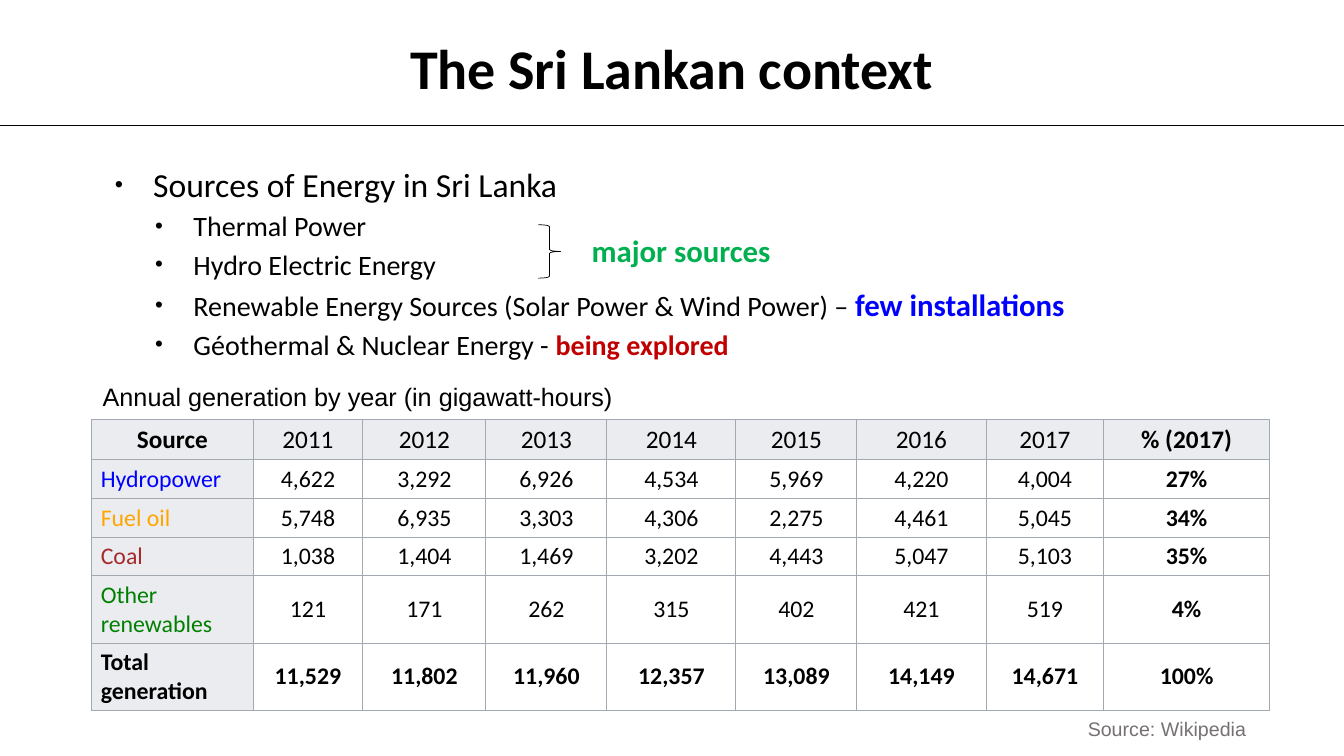
from lxml.etree import SubElement
from pptx import Presentation
from pptx.dml.color import RGBColor
from pptx.enum.shapes import MSO_CONNECTOR, MSO_SHAPE
from pptx.enum.text import MSO_ANCHOR, PP_ALIGN
from pptx.oxml.ns import qn
from pptx.util import Inches, Pt

BLACK, BLUE, GREEN, RED, GREY = "000000", "0000FF", "00B050", "C00000", "767171"
HEADER_FILL, BORDER = "EAECF0", "A2A9B1"

LABELS = [
    ("The Sri Lankan context", (3.25, 0.31, 6.82, 0.71), "Calibri", 40, BLACK, True, PP_ALIGN.CENTER),
    ("Annual generation by year (in gigawatt-hours)", (0.92, 3.73, 5.61, 0.4),
     "Arial", 18, BLACK, False, PP_ALIGN.LEFT),
    ("Source: Wikipedia", (10.69, 7.06, 1.88, 0.34), "Arial", 14, GREY, False, PP_ALIGN.LEFT),
    ("major sources", (5.77, 2.25, 2.4, 0.47), "Calibri", 22, GREEN, True, PP_ALIGN.LEFT),
]

BULLETS = [
    (0, [("Sources of Energy in Sri Lanka", 24, BLACK, False)]),
    (1, [("Thermal Power", 20, BLACK, False)]),
    (1, [("Hydro Electric Energy", 20, BLACK, False)]),
    (1, [("Renewable Energy Sources (Solar Power & Wind Power) – ", 20, BLACK, False),
         ("few installations", 22, BLUE, True)]),
    (1, [("Géothermal & Nuclear Energy - ", 20, BLACK, False),
         ("being explored", 20, RED, True)]),
]
BULLET_LEVELS = [(0.38, 70), (0.78, 80)]
HANGING = 0.38

GENERATION = [
    ("Source", "2011", "2012", "2013", "2014", "2015", "2016", "2017", "% (2017)"),
    ("Hydropower", "4,622", "3,292", "6,926", "4,534", "5,969", "4,220", "4,004", "27%"),
    ("Fuel oil", "5,748", "6,935", "3,303", "4,306", "2,275", "4,461", "5,045", "34%"),
    ("Coal", "1,038", "1,404", "1,469", "3,202", "4,443", "5,047", "5,103", "35%"),
    ("Other renewables", "121", "171", "262", "315", "402", "421", "519", "4%"),
    ("Total generation", "11,529", "11,802", "11,960", "12,357", "13,089", "14,149", "14,671", "100%"),
]
SOURCE_COLORS = [BLACK, BLUE, "FFA500", "A52A2A", "008000", BLACK]
COLUMN_WIDTHS = [1.6, 1.09, 1.22, 1.2, 1.28, 1.2, 1.28, 1.17, 1.64]
ROW_HEIGHTS = [0.4, 0.38, 0.38, 0.38, 0.66, 0.66]


def color(hex_string):
    return RGBColor.from_string(hex_string)


def add_run(paragraph, text, font_name, size, hex_string, bold):
    run = paragraph.add_run()
    run.text = text
    run.font.name = font_name
    run.font.size = Pt(size)
    run.font.bold = bold
    run.font.color.rgb = color(hex_string)


def add_frame(slide, box, anchor):
    frame = slide.shapes.add_textbox(*map(Inches, box)).text_frame
    frame.word_wrap = True
    frame.vertical_anchor = anchor
    return frame


def add_bullet(paragraph, level):
    indent, percent = BULLET_LEVELS[level]
    paragraph.level = level
    paragraph.line_spacing = 1.14
    properties = paragraph._p.get_or_add_pPr()
    properties.set("marL", str(Inches(indent)))
    properties.set("indent", str(-Inches(HANGING)))
    SubElement(properties, qn("a:buSzPct"), val=str(percent * 1000))
    SubElement(properties, qn("a:buFont"), typeface="Arial")
    SubElement(properties, qn("a:buChar"), char="•")


def add_borders(cell):
    properties = cell._tc.get_or_add_tcPr()
    for side in ("lnL", "lnR", "lnT", "lnB"):
        edge = SubElement(properties, qn(f"a:{side}"), w=str(Pt(0.75)))
        SubElement(SubElement(edge, qn("a:solidFill")), qn("a:srgbClr"), val=BORDER)


def add_generation(slide):
    table = slide.shapes.add_table(
        len(GENERATION), len(COLUMN_WIDTHS), Inches(0.91), Inches(4.16),
        Inches(sum(COLUMN_WIDTHS)), Inches(sum(ROW_HEIGHTS))).table
    table.first_row = table.horz_banding = False
    for column, width in zip(table.columns, COLUMN_WIDTHS):
        column.width = Inches(width)
    last_row, last_column = len(GENERATION) - 1, len(COLUMN_WIDTHS) - 1
    for r, values in enumerate(GENERATION):
        table.rows[r].height = Inches(ROW_HEIGHTS[r])
        for c, value in enumerate(values):
            cell = table.cell(r, c)
            add_borders(cell)
            if r == 0 or c == 0:
                cell.fill.solid()
                cell.fill.fore_color.rgb = color(HEADER_FILL)
            else:
                cell.fill.background()
            cell.vertical_anchor = MSO_ANCHOR.MIDDLE
            cell.margin_left = cell.margin_right = Inches(0.09)
            cell.margin_top = cell.margin_bottom = Inches(0.05)
            paragraph = cell.text_frame.paragraphs[0]
            paragraph.alignment = PP_ALIGN.LEFT if c == 0 and r else PP_ALIGN.CENTER
            bold = r == last_row or c == last_column or r == c == 0
            add_run(paragraph, value, "Calibri", 17 if r else 18,
                    BLACK if c else SOURCE_COLORS[r], bold)


def main():
    deck = Presentation()
    deck.slide_width, deck.slide_height = Inches(13.33), Inches(7.5)
    slide = deck.slides.add_slide(deck.slide_layouts[6])

    rule = slide.shapes.add_connector(
        MSO_CONNECTOR.STRAIGHT, 0, Inches(1.24), deck.slide_width, Inches(1.24))
    rule.line.color.rgb = color(BLACK)
    rule.line.width = Pt(0.5)
    SubElement(rule._element.spPr, qn("a:effectLst"))

    energy = add_frame(slide, (1.04, 1.52, 10.28, 2.09), MSO_ANCHOR.TOP)
    for i, (level, runs) in enumerate(BULLETS):
        paragraph = energy.add_paragraph() if i else energy.paragraphs[0]
        add_bullet(paragraph, level)
        for text, size, hex_string, bold in runs:
            add_run(paragraph, text, "Calibri", size, hex_string, bold)

    add_generation(slide)

    brace = slide.shapes.add_shape(
        MSO_SHAPE.RIGHT_BRACE, Inches(5.34), Inches(2.23), Inches(0.22), Inches(0.53))
    brace.shadow.inherit = False
    brace.fill.background()
    brace.line.color.rgb = color(BLACK)
    brace.line.width = Pt(0.5)

    for text, box, font_name, size, hex_string, bold, alignment in LABELS:
        paragraph = add_frame(slide, box, MSO_ANCHOR.MIDDLE).paragraphs[0]
        paragraph.alignment = alignment
        add_run(paragraph, text, font_name, size, hex_string, bold)

    deck.save("out.pptx")


if __name__ == "__main__":
    main()
